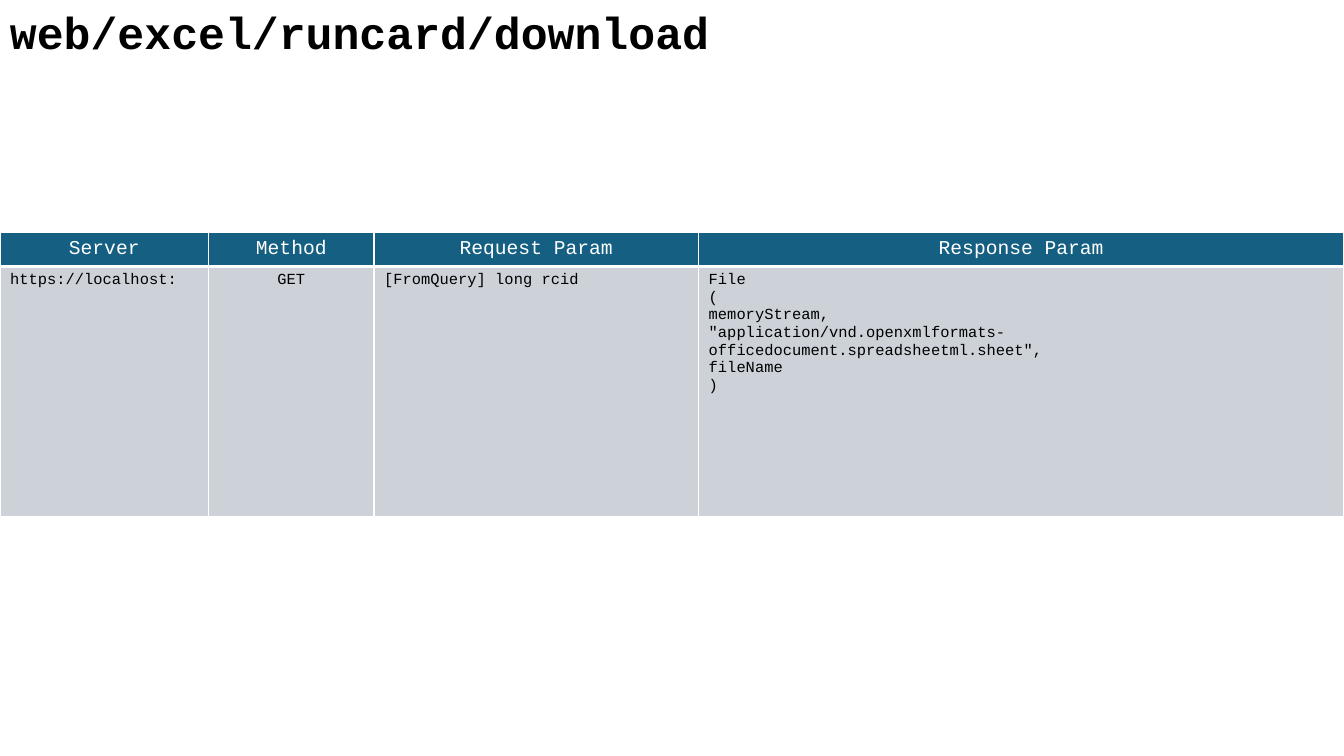
from lxml import etree
from pptx import Presentation
from pptx.dml.color import RGBColor
from pptx.enum.text import MSO_AUTO_SIZE, PP_ALIGN
from pptx.oxml.ns import qn
from pptx.util import Inches, Pt

LEFT, CENTER = PP_ALIGN.LEFT, PP_ALIGN.CENTER
FIT_SHAPE = MSO_AUTO_SIZE.SHAPE_TO_FIT_TEXT
FONT_NAME = "Courier New"
COLORS = {"black": "000000", "white": "FFFFFF", "header": "156082", "body": "CCD2D8"}


def write_lines(text_frame, lines, alignment, size, color, bold):
    text_frame.text = "\n".join(lines)
    font_format = {"name": FONT_NAME, "size": Pt(size), "bold": bold}
    for paragraph in text_frame.paragraphs:
        paragraph.alignment = alignment
        for run in paragraph.runs:
            for attribute, value in font_format.items():
                setattr(run.font, attribute, value)
            run.font.color.rgb = RGBColor.from_string(COLORS[color])


def add_border(cell, edge, width):
    properties = cell._tc.get_or_add_tcPr()
    line = etree.SubElement(properties, qn(f"a:ln{edge}"), w=str(Pt(width)))
    fill = etree.SubElement(line, qn("a:solidFill"))
    etree.SubElement(fill, qn("a:srgbClr"), val=COLORS["white"])


presentation = Presentation()
presentation.slide_width = Inches(13.33)
presentation.slide_height = Inches(7.5)
slide = presentation.slides.add_slide(presentation.slide_layouts[6])

title = slide.shapes.add_textbox(0, 0, Inches(9.45), Inches(0.64))
title.text_frame.word_wrap = True
title.text_frame.auto_size = FIT_SHAPE
write_lines(title.text_frame, ["web/excel/runcard/download"], LEFT, 32, "black", True)

columns = [
    ("Server", 2.07, LEFT, ["https://localhost:"]),
    ("Method", 1.64, CENTER, ["GET"]),
    ("Request Param", 3.22, LEFT, ["[FromQuery] long rcid"]),
    ("Response Param", 6.4, LEFT, [
        "File",
        "(",
        "memoryStream,",
        '"application/vnd.openxmlformats-officedocument.spreadsheetml.sheet",',
        "fileName",
        ")",
    ]),
]
row_heights = [0.33, 2.48]

table = slide.shapes.add_table(
    len(row_heights), len(columns), 0, Inches(2.31), Inches(13.33), Inches(sum(row_heights))
).table
for row, height in zip(table.rows, row_heights):
    row.height = Inches(height)

for index, (heading, width, alignment, lines) in enumerate(columns):
    table.columns[index].width = Inches(width)
    cell_rows = [
        ([heading], CENTER, 14, "white", "header"),
        (lines, alignment, 11, "black", "body"),
    ]
    for row_index, (texts, cell_alignment, size, color, fill) in enumerate(cell_rows):
        cell = table.cell(row_index, index)
        for edge in "LRTB":
            add_border(cell, edge, 3 if fill == "header" and edge == "B" else 1)
        cell.fill.solid()
        cell.fill.fore_color.rgb = RGBColor.from_string(COLORS[fill])
        write_lines(cell.text_frame, texts, cell_alignment, size, color, False)

presentation.save("out.pptx")
